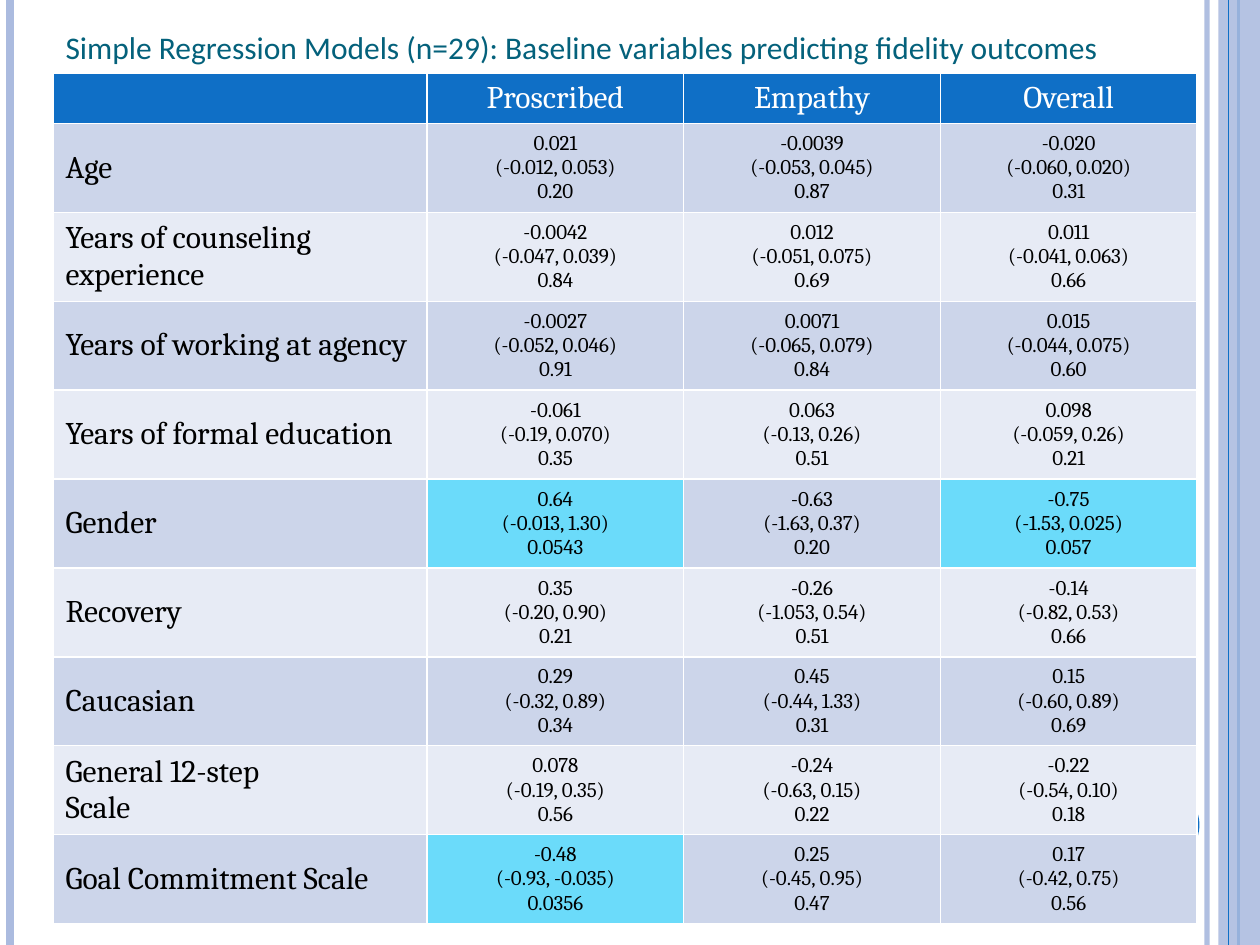
"""Build a slide tabulating simple regression models of fidelity outcomes."""
from dataclasses import dataclass

import lxml.etree
import pptx
import pptx.dml.color
import pptx.dml.fill
import pptx.enum.shapes
import pptx.enum.text
import pptx.oxml.ns
import pptx.shapes.autoshape
import pptx.slide
import pptx.table
import pptx.util

RGBColor = pptx.dml.color.RGBColor
PP_ALIGN = pptx.enum.text.PP_ALIGN
MIDDLE = pptx.enum.text.MSO_ANCHOR.MIDDLE

WHITE = RGBColor(0xFF, 0xFF, 0xFF)
BLACK = RGBColor(0x00, 0x00, 0x00)
BLUE = RGBColor(0x0F, 0x6F, 0xC6)
LAVENDER = RGBColor(0xAB, 0xBB, 0xDF)
TEAL = RGBColor(0x04, 0x61, 0x7B)
BAND_DARK = RGBColor(0xCC, 0xD5, 0xEA)
BAND_LIGHT = RGBColor(0xE7, 0xEB, 0xF5)
HIGHLIGHT = RGBColor(0x6B, 0xDB, 0xFA)

SLIDE_WIDTH = pptx.util.Inches(10)
SLIDE_HEIGHT = pptx.util.Inches(7.5)
LEFT = pptx.util.Inches(0.42)
TABLE_TOP = pptx.util.Inches(0.58)
TABLE_WIDTH = pptx.util.Inches(9.08)
TABLE_HEIGHT = pptx.util.Inches(6.75)
LABEL_WIDTH = pptx.util.Inches(2.97)
HEADER_HEIGHT = pptx.util.Inches(0.4)


@dataclass(frozen=True)
class Stripe:
    """Full-height vertical line at a share of the slide's width."""
    x_share: float
    color: RGBColor
    weight: float
    opacity: int = 100


@dataclass(frozen=True)
class Estimate:
    """Coefficient, confidence interval and p-value of one model."""
    coefficient: str
    interval: str
    p_value: str
    notable: bool = False

    def lines(self) -> list[str]:
        """Return the three lines shown in a cell."""
        return [self.coefficient, f"({self.interval})", self.p_value]


@dataclass(frozen=True)
class Predictor:
    """Baseline variable with one estimate per outcome."""
    label: str
    estimates: tuple[Estimate, ...]


OUTCOMES = ("Proscribed", "Empathy", "Overall")
PREDICTORS = (
    Predictor("Age", (
        Estimate("0.021", "-0.012, 0.053", "0.20"),
        Estimate("-0.0039", "-0.053, 0.045", "0.87"),
        Estimate("-0.020", "-0.060, 0.020", "0.31"))),
    Predictor("Years of counseling experience", (
        Estimate("-0.0042", "-0.047, 0.039", "0.84"),
        Estimate("0.012", "-0.051, 0.075", "0.69"),
        Estimate("0.011", "-0.041, 0.063", "0.66"))),
    Predictor("Years of working at agency", (
        Estimate("-0.0027", "-0.052, 0.046", "0.91"),
        Estimate("0.0071", "-0.065, 0.079", "0.84"),
        Estimate("0.015", "-0.044, 0.075", "0.60"))),
    Predictor("Years of formal education", (
        Estimate("-0.061", "-0.19, 0.070", "0.35"),
        Estimate("0.063", "-0.13, 0.26", "0.51"),
        Estimate("0.098", "-0.059, 0.26", "0.21"))),
    Predictor("Gender", (
        Estimate("0.64", "-0.013, 1.30", "0.0543", notable=True),
        Estimate("-0.63", "-1.63, 0.37", "0.20"),
        Estimate("-0.75", "-1.53, 0.025", "0.057", notable=True))),
    Predictor("Recovery", (
        Estimate("0.35", "-0.20, 0.90", "0.21"),
        Estimate("-0.26", "-1.053, 0.54", "0.51"),
        Estimate("-0.14", "-0.82, 0.53", "0.66"))),
    Predictor("Caucasian", (
        Estimate("0.29", "-0.32, 0.89", "0.34"),
        Estimate("0.45", "-0.44, 1.33", "0.31"),
        Estimate("0.15", "-0.60, 0.89", "0.69"))),
    Predictor("General 12-step\nScale", (
        Estimate("0.078", "-0.19, 0.35", "0.56"),
        Estimate("-0.24", "-0.63, 0.15", "0.22"),
        Estimate("-0.22", "-0.54, 0.10", "0.18"))),
    Predictor("Goal Commitment Scale", (
        Estimate("-0.48", "-0.93, -0.035", "0.0356", notable=True),
        Estimate("0.25", "-0.45, 0.95", "0.47"),
        Estimate("0.17", "-0.42, 0.75", "0.56"))),
)


def paint(fill: pptx.dml.fill.FillFormat, color: RGBColor, element, opacity: int = 100) -> None:
    """Apply a solid colour, with the opacity in percent, to a fill of the element."""
    fill.solid()
    fill.fore_color.rgb = color
    if opacity < 100:
        color_node = next(element.iter(pptx.oxml.ns.qn("a:srgbClr")))
        lxml.etree.SubElement(color_node, pptx.oxml.ns.qn("a:alpha"), val=str(opacity * 1000))


def draw_stripe(slide: pptx.slide.Slide, stripe: Stripe) -> None:
    """Draw one stripe from the top to the bottom of the slide."""
    x = round(SLIDE_WIDTH * stripe.x_share)
    line = slide.shapes.add_connector(
        pptx.enum.shapes.MSO_CONNECTOR.STRAIGHT, x, 0, x, SLIDE_HEIGHT)
    line.line.width = pptx.util.Pt(stripe.weight)
    properties = line._element.spPr
    paint(line.line.fill, stripe.color, properties, stripe.opacity)
    lxml.etree.SubElement(properties, pptx.oxml.ns.qn("a:effectLst"))


def draw_block(slide: pptx.slide.Slide, preset: pptx.enum.shapes.MSO_SHAPE,
               box: tuple[float, float, float, float], color: RGBColor, opacity: int = 100) -> None:
    """Draw a plain shape in a box given as shares of the slide."""
    left, top, width, height = box
    block = slide.shapes.add_shape(
        preset, round(SLIDE_WIDTH * left), round(SLIDE_HEIGHT * top),
        round(SLIDE_WIDTH * width), round(SLIDE_HEIGHT * height))
    block.shadow.inherit = False
    block.line.fill.background()
    paint(block.fill, color, block._element.spPr, opacity)


def write_title(slide: pptx.slide.Slide, text: str) -> None:
    """Place and format the title placeholder."""
    title = slide.shapes.title
    title.left, title.top = LEFT, pptx.util.Inches(0.17)
    title.width, title.height = pptx.util.Inches(9), pptx.util.Inches(0.4)
    frame = title.text_frame
    frame.text = text
    frame.word_wrap = True
    frame.auto_size = pptx.enum.text.MSO_AUTO_SIZE.NONE
    frame.vertical_anchor = pptx.enum.text.MSO_ANCHOR.TOP
    heading = frame.paragraphs[0]
    heading.alignment = PP_ALIGN.LEFT
    heading.font.name = "Calibri"
    heading.font.size = pptx.util.Pt(18)
    heading.font.color.rgb = TEAL


def write_cell(cell: pptx.table._Cell, lines: list[str], fill: RGBColor, size: int = 18,
               color: RGBColor = BLACK, alignment: PP_ALIGN = PP_ALIGN.CENTER) -> None:
    """Fill a table cell with one paragraph per line."""
    cell.fill.solid()
    cell.fill.fore_color.rgb = fill
    cell.vertical_anchor = MIDDLE
    cell.text_frame.text = "\n".join(lines)
    for paragraph in cell.text_frame.paragraphs:
        paragraph.alignment = alignment
        paragraph.font.name = "Cambria"
        paragraph.font.size = pptx.util.Pt(size)
        paragraph.font.bold = False
        paragraph.font.color.rgb = color


def draw_models(slide: pptx.slide.Slide) -> None:
    """Draw the table of predictors by outcomes."""
    models = slide.shapes.add_table(
        len(PREDICTORS) + 1, len(OUTCOMES) + 1, LEFT, TABLE_TOP, TABLE_WIDTH, TABLE_HEIGHT).table
    for index, column in enumerate(models.columns):
        column.width = LABEL_WIDTH if index == 0 else (TABLE_WIDTH - LABEL_WIDTH) // len(OUTCOMES)
    for index, row in enumerate(models.rows):
        row.height = HEADER_HEIGHT if index == 0 else (TABLE_HEIGHT - HEADER_HEIGHT) // len(PREDICTORS)
    for column, outcome in enumerate(("", *OUTCOMES)):
        write_cell(models.cell(0, column), [outcome], BLUE, color=WHITE)
    for row, predictor in enumerate(PREDICTORS, start=1):
        band = BAND_DARK if row % 2 else BAND_LIGHT
        write_cell(models.cell(row, 0), [predictor.label], band, alignment=PP_ALIGN.LEFT)
        for column, estimate in enumerate(predictor.estimates, start=1):
            write_cell(models.cell(row, column), estimate.lines(),
                       HIGHLIGHT if estimate.notable else band, size=12)


def main() -> None:
    """Compose and save the slide."""
    deck = pptx.Presentation()
    deck.slide_width, deck.slide_height = SLIDE_WIDTH, SLIDE_HEIGHT
    slide = deck.slides.add_slide(deck.slide_layouts.get_by_name("Title Only"))
    shapes = pptx.enum.shapes.MSO_SHAPE
    for stripe in (Stripe(0.958, LAVENDER, 3, 93), Stripe(0.008, LAVENDER, 4.5), Stripe(0.983, BLUE, 1.5)):
        draw_stripe(slide, stripe)
    draw_block(slide, shapes.RECTANGLE, (0.967, 0, 0.033, 1), LAVENDER, 87)
    draw_stripe(slide, Stripe(0.975, BLUE, 0.75))
    draw_block(slide, shapes.OVAL, (0.892, 0.833, 0.06, 0.08), BLUE)
    write_title(slide, "Simple Regression Models (n=29): Baseline variables predicting fidelity outcomes")
    draw_models(slide)
    deck.save("out.pptx")


if __name__ == "__main__":
    main()
